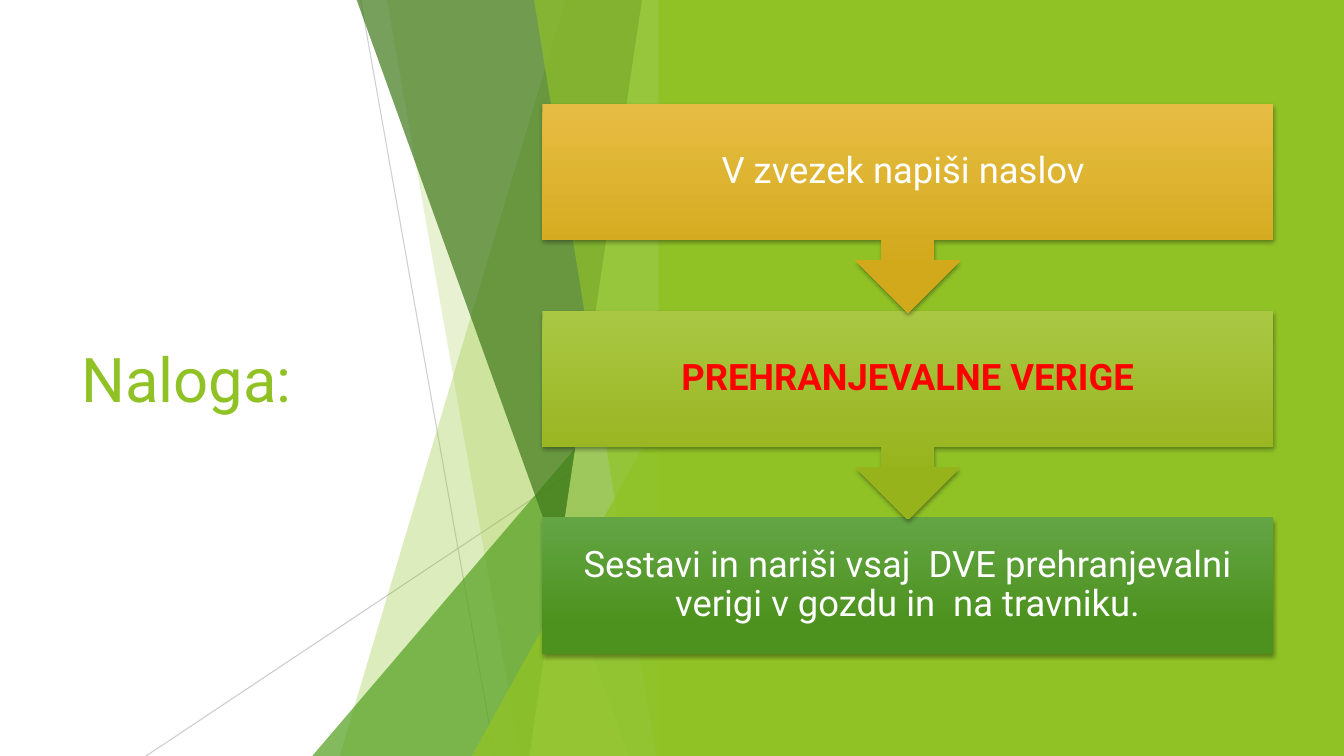
from dataclasses import dataclass

from lxml.etree import SubElement
from pptx import Presentation
from pptx.dml.color import RGBColor
from pptx.enum.shapes import MSO_CONNECTOR, MSO_SHAPE
from pptx.enum.text import MSO_ANCHOR, MSO_AUTO_SIZE, PP_ALIGN
from pptx.oxml.ns import qn
from pptx.shapes.autoshape import Shape
from pptx.shapes.base import BaseShape
from pptx.slide import Slide
from pptx.text.text import TextFrame
from pptx.util import Cm, Pt

LIME = RGBColor(0x90, 0xC2, 0x26)
GREEN = RGBColor(0x54, 0xA0, 0x21)
DARK = RGBColor(0x3F, 0x78, 0x19)
PALE = RGBColor(0xC0, 0xE4, 0x74)
GREY = RGBColor(0xBF, 0xBF, 0xBF)
WHITE = RGBColor(0xFF, 0xFF, 0xFF)
RED = RGBColor(0xFF, 0x00, 0x00)
BLACK = RGBColor(0x00, 0x00, 0x00)
GOLD_TOP = RGBColor(0xE7, 0xBC, 0x43)
GOLD_END = RGBColor(0xD2, 0xA9, 0x1B)
OLIVE_TOP = RGBColor(0xAA, 0xC7, 0x44)
OLIVE_END = RGBColor(0x97, 0xB3, 0x1C)
LEAF_TOP = RGBColor(0x63, 0xA5, 0x45)
LEAF_END = RGBColor(0x4D, 0x92, 0x1E)

FONT = "Roboto"
WIDE, HIGH = 33.87, 19.05
EDGE = 16.92
PANEL = 16.6
STEP_LEFT, STEP_TOP, STEP_WIDE = 13.67, 2.62, 18.42
PITCH = 5.21


@dataclass(frozen=True)
class Ray:
    """A thin line across the decoration."""
    x1: float
    y1: float
    x2: float
    y2: float
    alpha: int


@dataclass(frozen=True)
class Facet:
    """A full-height sheet with a slanted left side."""
    head: float
    foot: float
    color: RGBColor
    alpha: int


@dataclass(frozen=True)
class Wedge:
    """A right triangle rising towards the panel."""
    left: float
    top: float
    color: RGBColor
    alpha: int


@dataclass(frozen=True)
class Step:
    """One box of the task chain."""
    text: str
    kind: MSO_SHAPE
    high: float
    start: RGBColor
    end: RGBColor
    ink: RGBColor = WHITE
    bold: bool = False


RAYS = [
    Ray(9.09, 0, 12.47, HIGH, 75),
    Ray(EDGE, 10.24, 3.68, HIGH, 80),
]
SHEETS = [
    Facet(14.25, 8.56, LIME, 30),
    Facet(9.75, 13.11, LIME, 20),
    Wedge(7.87, 8.46, GREEN, 72),
    Facet(8.99, 15.85, DARK, 70),
    Facet(16.18, 13.34, PALE, 70),
    Facet(13.46, 16.54, LIME, 65),
    Wedge(11.89, 9.98, LIME, 80),
]
STEPS = [
    Step("V zvezek napiši naslov ", MSO_SHAPE.DOWN_ARROW_CALLOUT, 5.26,
         GOLD_TOP, GOLD_END),
    Step("PREHRANJEVALNE VERIGE", MSO_SHAPE.DOWN_ARROW_CALLOUT, 5.26,
         OLIVE_TOP, OLIVE_END, RED, True),
    Step("Sestavi in nariši vsaj  DVE prehranjevalni verigi v gozdu in  na travniku.",
         MSO_SHAPE.RECTANGLE, 3.43, LEAF_TOP, LEAF_END),
]


def fade(shape: BaseShape, alpha: int) -> None:
    """Make the colour of a shape partly transparent."""
    color = shape.element.spPr.find(".//" + qn("a:srgbClr"))
    SubElement(color, qn("a:alpha"), val=str(alpha * 1000))


def paint(shape: Shape, color: RGBColor) -> None:
    """Give a shape a flat fill with no line or shadow."""
    shape.fill.solid()
    shape.fill.fore_color.rgb = color
    shape.line.fill.background()
    shape.shadow.inherit = False


def write(frame: TextFrame, text: str, size: int, color: RGBColor,
          align: PP_ALIGN, bold: bool = False) -> None:
    """Put one formatted paragraph in a text frame."""
    frame.text = text
    frame.word_wrap = True
    frame.auto_size = MSO_AUTO_SIZE.NONE
    frame.vertical_anchor = MSO_ANCHOR.MIDDLE
    frame.paragraphs[0].alignment = align
    font = frame.paragraphs[0].runs[0].font
    font.name, font.size, font.bold = FONT, Pt(size), bold
    font.color.rgb = color


def draw_ray(slide: Slide, ray: Ray) -> None:
    """Draw a thin grey line."""
    line = slide.shapes.add_connector(
        MSO_CONNECTOR.STRAIGHT, Cm(ray.x1), Cm(ray.y1), Cm(ray.x2), Cm(ray.y2))
    line.line.color.rgb = GREY
    line.line.width = Pt(0.75)
    fade(line, ray.alpha)
    SubElement(line.element.spPr, qn("a:effectLst"))


def draw_sheet(slide: Slide, sheet: Facet | Wedge) -> None:
    """Draw a transparent facet or wedge."""
    if isinstance(sheet, Facet):
        pen = slide.shapes.build_freeform(Cm(sheet.head), Cm(0))
        pen.add_line_segments([(Cm(EDGE), Cm(0)), (Cm(EDGE), Cm(HIGH)),
                               (Cm(sheet.foot), Cm(HIGH))])
        shape = pen.convert_to_shape()
    else:
        shape = slide.shapes.add_shape(
            MSO_SHAPE.ISOSCELES_TRIANGLE, Cm(sheet.left), Cm(sheet.top),
            Cm(EDGE - sheet.left), Cm(HIGH - sheet.top))
        shape.adjustments[0] = 1
    paint(shape, sheet.color)
    fade(shape, sheet.alpha)


def draw_step(slide: Slide, step: Step, row: int) -> None:
    """Draw a shaded box with its text and soft shadow."""
    box = slide.shapes.add_shape(
        step.kind, Cm(STEP_LEFT), Cm(STEP_TOP + row * PITCH),
        Cm(STEP_WIDE), Cm(step.high))
    box.fill.gradient()
    box.fill.gradient_angle = 270
    shades = [(0, step.start), (0.78, step.end)]
    for stop, (place, color) in zip(box.fill.gradient_stops, shades):
        stop.position = place
        stop.color.rgb = color
    box.line.fill.background()
    box.shadow.inherit = False
    glow = SubElement(
        box.element.spPr.find(qn("a:effectLst")), qn("a:outerShdw"),
        blurRad=str(Pt(3)), dist=str(Pt(2)), dir="5400000", rotWithShape="0")
    tint = SubElement(glow, qn("a:srgbClr"), val=str(BLACK))
    SubElement(tint, qn("a:alpha"), val="35000")
    frame = box.text_frame
    write(frame, step.text, 26, step.ink, PP_ALIGN.CENTER, step.bold)
    frame.paragraphs[0].line_spacing = 0.9
    frame.margin_left = frame.margin_right = Cm(0.51)
    frame.margin_top = frame.margin_bottom = Cm(0.51)


def main() -> None:
    """Build the slide and save it."""
    deck = Presentation()
    deck.slide_width, deck.slide_height = Cm(WIDE), Cm(HIGH)
    slide = deck.slides.add_slide(deck.slide_layouts[5])
    title = slide.shapes.title
    title.left, title.top = Cm(1.8), Cm(3.84)
    title.width, title.height = Cm(7.26), Cm(11.38)
    write(title.text_frame, "Naloga:", 44, LIME, PP_ALIGN.LEFT)
    for ray in RAYS:
        draw_ray(slide, ray)
    for sheet in SHEETS:
        draw_sheet(slide, sheet)
    panel = slide.shapes.add_shape(
        MSO_SHAPE.RECTANGLE, Cm(PANEL), Cm(0), Cm(WIDE - PANEL), Cm(HIGH))
    paint(panel, LIME)
    for row, step in reversed(list(enumerate(STEPS))):
        draw_step(slide, step, row)
    deck.save("out.pptx")


if __name__ == "__main__":
    main()
